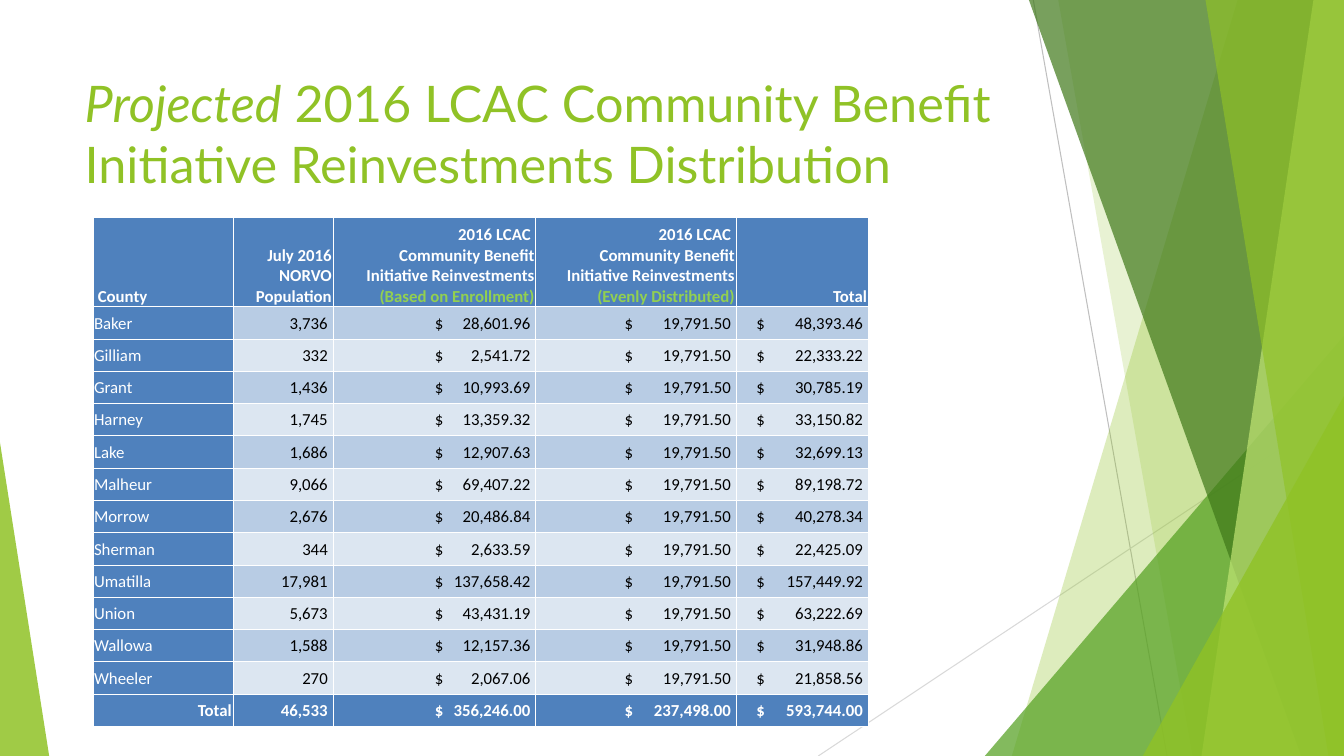
from lxml import etree
from pptx import Presentation
from pptx.dml.color import RGBColor
from pptx.enum.shapes import MSO_CONNECTOR, MSO_SHAPE
from pptx.enum.text import MSO_ANCHOR, PP_ALIGN
from pptx.oxml.ns import qn
from pptx.util import Cm, Pt

STRAIGHT = MSO_CONNECTOR.STRAIGHT
TRIANGLE = MSO_SHAPE.ISOSCELES_TRIANGLE
LEFT, RIGHT = PP_ALIGN.LEFT, PP_ALIGN.RIGHT
TOP, MIDDLE, BOTTOM = MSO_ANCHOR.TOP, MSO_ANCHOR.MIDDLE, MSO_ANCHOR.BOTTOM

WHITE = RGBColor(0xFF, 0xFF, 0xFF)
BLACK = RGBColor(0x00, 0x00, 0x00)
LIME = RGBColor(0x90, 0xC2, 0x26)
GREEN = RGBColor(0x54, 0xA0, 0x21)
DARK_GREEN = RGBColor(0x3F, 0x78, 0x19)
PALE_LIME = RGBColor(0xC0, 0xE4, 0x74)
NOTE_GREEN = RGBColor(0x92, 0xD0, 0x50)
GRAY = RGBColor(0xBF, 0xBF, 0xBF)
LIGHT_GRAY = RGBColor(0xD9, 0xD9, 0xD9)
BLUE = RGBColor(0x4F, 0x81, 0xBD)
BAND_DARK = RGBColor(0xB8, 0xCC, 0xE4)
BAND_LIGHT = RGBColor(0xDC, 0xE6, 0xF1)

WIDTH, HEIGHT = 33.87, 19.05
INSET = 0.03
COLUMN_WIDTHS = [3.53, 2.52, 5.11, 5.05, 3.33]
DOLLAR_STOPS = {2: 2.54, 3: 2.21, 4: 0.48}
HEADER_HEIGHT, BODY_HEIGHT = 2.26, 10.58

FUND = ["2016 LCAC ", "Community Benefit Initiative Reinvestments"]
HEADERS = [
    [" County"],
    ["July 2016 NORVO Population"],
    FUND + ["(Based on Enrollment)"],
    FUND + ["(Evenly Distributed)"],
    ["Total"],
]
EVEN_SHARE = 19791.50
COUNTIES = [
    ("Baker", 3736, 28601.96),
    ("Gilliam", 332, 2541.72),
    ("Grant", 1436, 10993.69),
    ("Harney", 1745, 13359.32),
    ("Lake", 1686, 12907.63),
    ("Malheur", 9066, 69407.22),
    ("Morrow", 2676, 20486.84),
    ("Sherman", 344, 2633.59),
    ("Umatilla", 17981, 137658.42),
    ("Union", 5673, 43431.19),
    ("Wallowa", 1588, 12157.36),
    ("Wheeler", 270, 2067.06),
]


def write(paragraph, text, font="Calibri", size=12, color=WHITE,
          bold=False, italic=False, align=LEFT):
    paragraph.alignment = align
    run = paragraph.add_run()
    run.text = text
    run.font.name = font
    run.font.size = Pt(size)
    run.font.color.rgb = color
    run.font.bold = bold
    run.font.italic = italic


class CountySlide:
    def __init__(self, presentation):
        self.slide = presentation.slides.add_slide(presentation.slide_layouts[5])
        self.shapes = self.slide.shapes

    def title(self, parts, left, top, width, height):
        title = self.shapes.title
        title.left, title.top = Cm(left), Cm(top)
        title.width, title.height = Cm(width), Cm(height)
        title.text_frame.word_wrap = True
        title.text_frame.vertical_anchor = TOP
        for text, italic in parts:
            write(title.text_frame.paragraphs[0], text, font="Lato", size=36,
                  color=LIME, italic=italic)

    def line(self, start, end, color):
        line = self.shapes.add_connector(STRAIGHT, *map(Cm, start + end))
        line.line.color.rgb = color
        line.line.width = Pt(0.75)
        etree.SubElement(line._element.spPr, qn("a:effectLst"))

    def paint(self, shape, color, opacity):
        shape.shadow.inherit = False
        shape.fill.solid()
        shape.fill.fore_color.rgb = color
        fill_color = shape._element.spPr.find(f".//{qn('a:srgbClr')}")
        etree.SubElement(fill_color, qn("a:alpha"), val=str(opacity * 1000))
        shape.line.fill.background()

    def wedge(self, top_x, bottom_x, color, opacity):
        """Fill from a slanted edge to the right side of the slide."""
        builder = self.shapes.build_freeform(Cm(top_x), 0)
        corners = [(WIDTH, 0), (WIDTH, HEIGHT), (bottom_x, HEIGHT)]
        builder.add_line_segments([(Cm(x), Cm(y)) for x, y in corners], close=True)
        self.paint(builder.convert_to_shape(), color, opacity)

    def triangle(self, left, width, height, apex, color, opacity):
        """Stand a triangle on the bottom edge of the slide."""
        shape = self.shapes.add_shape(TRIANGLE, Cm(left), Cm(HEIGHT - height),
                                      Cm(width), Cm(height))
        shape.adjustments[0] = apex
        self.paint(shape, color, opacity)

    def table(self, left, top, row_count):
        frame = self.shapes.add_table(
            row_count, len(COLUMN_WIDTHS), Cm(left), Cm(top),
            Cm(sum(COLUMN_WIDTHS)), Cm(HEADER_HEIGHT + BODY_HEIGHT))
        table = frame.table
        table.first_row = table.horz_banding = False
        for column, width in zip(table.columns, COLUMN_WIDTHS):
            column.width = Cm(width)
        for index, row in enumerate(table.rows):
            row.height = Cm(BODY_HEIGHT / (row_count - 1) if index else HEADER_HEIGHT)
        return table

    def cell(self, cell, fill, anchor=MIDDLE, right=INSET):
        cell.margin_left = cell.margin_top = Cm(INSET)
        cell.margin_right, cell.margin_bottom = Cm(right), 0
        cell.vertical_anchor = anchor
        properties = cell._tc.get_or_add_tcPr()
        for side in "LRTB":
            border = etree.SubElement(properties, qn(f"a:ln{side}"), w=str(Pt(0.5)))
            solid = etree.SubElement(border, qn("a:solidFill"))
            etree.SubElement(solid, qn("a:srgbClr"), val=str(WHITE))
        cell.fill.solid()
        cell.fill.fore_color.rgb = fill
        return cell.text_frame

    def header(self, cell, lines, align):
        frame = self.cell(cell, BLUE, anchor=BOTTOM)
        for index, text in enumerate(lines):
            paragraph = frame.add_paragraph() if index else frame.paragraphs[0]
            color = NOTE_GREEN if text.startswith("(") else WHITE
            write(paragraph, text, color=color, bold=True, align=align)

    def money(self, cell, column, amount, fill, **style):
        paragraph = self.cell(cell, fill).paragraphs[0]
        tabs = etree.SubElement(paragraph._p.get_or_add_pPr(), qn("a:tabLst"))
        amount_stop = COLUMN_WIDTHS[column] - 0.16
        for position, kind in ((DOLLAR_STOPS[column], "l"), (amount_stop, "r")):
            etree.SubElement(tabs, qn("a:tab"), pos=str(Cm(position)), algn=kind)
        write(paragraph, f"\t$\t{amount:,.2f}", **style)

    def county_row(self, cells, name, population, amounts, fill, name_align, **style):
        name_frame = self.cell(cells[0], BLUE)
        write(name_frame.paragraphs[0], name, align=name_align,
              bold=style["bold"])
        population_frame = self.cell(cells[1], fill, right=0.13)
        write(population_frame.paragraphs[0], f"{population:,}", align=RIGHT, **style)
        for column, amount in enumerate(amounts, start=2):
            self.money(cells[column], column, amount, fill, **style)


def main():
    presentation = Presentation()
    presentation.slide_width, presentation.slide_height = Cm(WIDTH), Cm(HEIGHT)
    page = CountySlide(presentation)

    # Green facets
    page.line((26.04, 0), (29.41, HEIGHT), GRAY)
    page.line((WIDTH, 10.24), (20.62, HEIGHT), LIGHT_GRAY)
    page.wedge(31.19, 25.5, LIME, 30)
    page.wedge(26.67, 30.05, LIME, 20)
    page.triangle(24.82, 9.05, 10.59, 1, GREEN, 72)
    page.wedge(25.93, 32.79, DARK_GREEN, 70)
    page.wedge(33.1, 30.28, PALE_LIME, 70)
    page.wedge(30.38, 33.48, LIME, 65)
    page.triangle(28.8, 5.07, 9.07, 1, LIME, 80)
    page.triangle(0, 1.24, 7.9, 0, LIME, 85)

    # Title
    page.title([("Projected", True),
                (" 2016 LCAC Community Benefit Initiative Reinvestments Distribution",
                 False)], 1.88, 1.7, 23.88, 3.66)

    # Distribution table
    table = page.table(2.34, 5.47, len(COUNTIES) + 2)
    for column, lines in enumerate(HEADERS):
        page.header(table.cell(0, column), lines, RIGHT if column else LEFT)
    rows = list(table.rows)
    for index, (name, population, enrolled) in enumerate(COUNTIES):
        page.county_row(rows[index + 1].cells, name, population,
                        (enrolled, EVEN_SHARE, enrolled + EVEN_SHARE),
                        BAND_LIGHT if index % 2 else BAND_DARK, LEFT,
                        color=BLACK, bold=False)

    # Total row
    enrolled_total = sum(enrolled for _, _, enrolled in COUNTIES)
    even_total = EVEN_SHARE * len(COUNTIES)
    page.county_row(rows[-1].cells, "Total",
                    sum(population for _, population, _ in COUNTIES),
                    (enrolled_total, even_total, enrolled_total + even_total),
                    BLUE, RIGHT, color=WHITE, bold=True)

    presentation.save("out.pptx")


if __name__ == "__main__":
    main()
